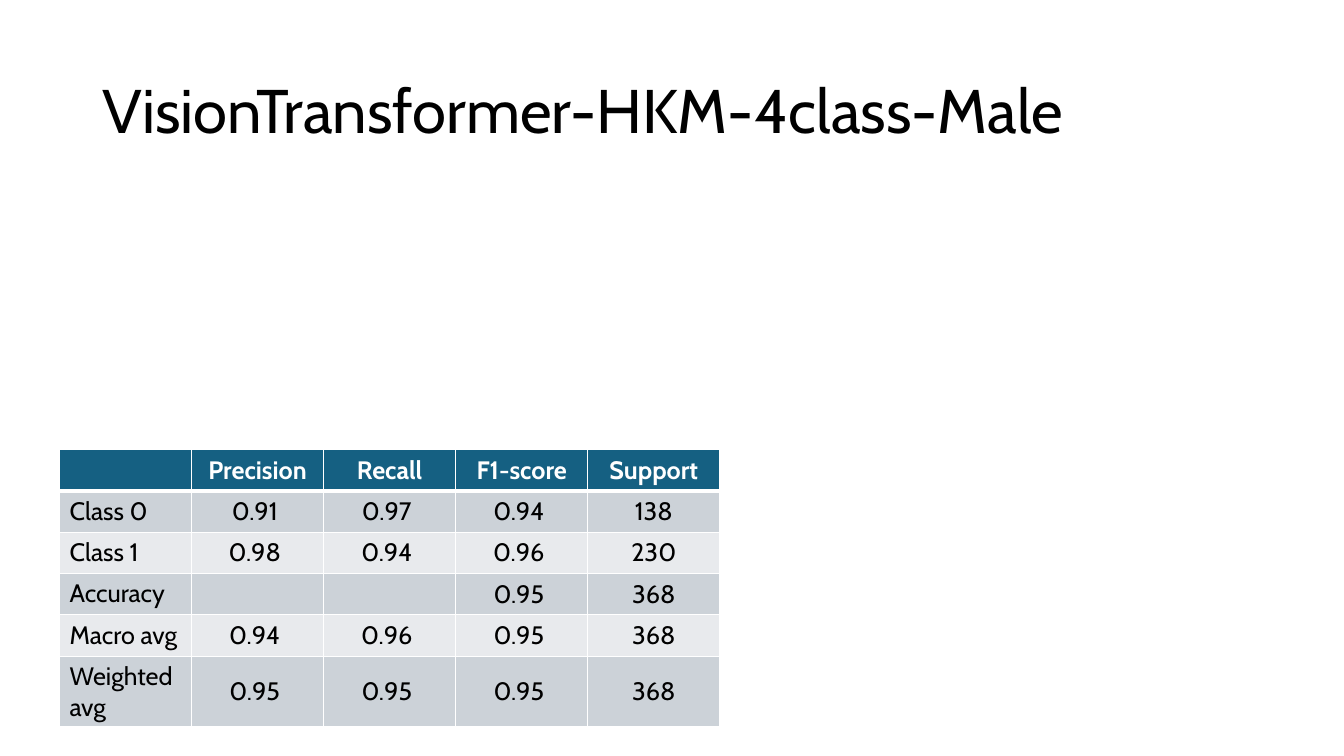
from lxml.etree import SubElement
from pptx import Presentation
from pptx.dml.color import RGBColor as Color
from pptx.enum.text import MSO_ANCHOR as Anchor, PP_ALIGN as Align
from pptx.oxml.ns import qn
from pptx.util import Inches, Pt

COLORS = {
    "text": "000000",
    "white": "FFFFFF",
    "header": "156082",
    "band_dark": "CCD2D8",
    "band_light": "E8EAED",
}

SCORES = [
    ["", "Precision", "Recall", "F1-score", "Support"],
    ["Class 0", "0.91 ", "0.97 ", "0.94 ", "138"],
    ["Class 1", "0.98 ", "0.94 ", "0.96 ", "230"],
    ["Accuracy", "", "", "0.95 ", "368"],
    ["Macro avg", "0.94 ", "0.96 ", "0.95 ", "368"],
    ["Weighted avg", "0.95 ", "0.95 ", "0.95 ", "368"],
]


class SlideBuilder:
    font_name = "Cabin"
    title_size = 44
    table_size = 18

    def __init__(self, presentation):
        self.slide = presentation.slides.add_slide(presentation.slide_layouts[6])

    def format_text(self, paragraph, size, color, bold=False):
        for run in paragraph.runs:
            run.font.name = self.font_name
            run.font.size = Pt(size)
            run.font.bold = bold
            run.font.color.rgb = Color.from_string(COLORS[color])

    def add_title(self, text, left, top, width, height):
        shape = self.slide.shapes.add_textbox(
            Inches(left), Inches(top), Inches(width), Inches(height)
        )
        text_frame = shape.text_frame
        text_frame.word_wrap = True
        text_frame.vertical_anchor = Anchor.MIDDLE
        text_frame.text = text
        paragraph = text_frame.paragraphs[0]
        paragraph.line_spacing = 0.9
        self.format_text(paragraph, self.title_size, "text")

    def add_borders(self, cell, top, bottom):
        properties = cell._tc.get_or_add_tcPr()
        widths = {"a:lnL": 1, "a:lnR": 1, "a:lnT": top, "a:lnB": bottom}
        for tag, width in widths.items():
            line = SubElement(properties, qn(tag), w=str(Pt(width)))
            fill = SubElement(line, qn("a:solidFill"))
            SubElement(fill, qn("a:srgbClr"), val=COLORS["white"])

    def format_cell(self, cell, text, row, column):
        is_header = row == 0
        fill = "header" if is_header else "band_dark" if row % 2 else "band_light"
        self.add_borders(cell, 3 if row == 1 else 1, 3 if is_header else 1)
        cell.fill.solid()
        cell.fill.fore_color.rgb = Color.from_string(COLORS[fill])
        cell.text_frame.text = text
        paragraph = cell.text_frame.paragraphs[0]
        if column > 0:
            cell.vertical_anchor = Anchor.MIDDLE
            paragraph.alignment = Align.CENTER
        text_color = "white" if is_header else "text"
        self.format_text(paragraph, self.table_size, text_color, is_header)

    def add_table(self, rows, left, top, column_width, row_height):
        column_count = len(rows[0])
        table = self.slide.shapes.add_table(
            len(rows), column_count, Inches(left), Inches(top),
            Inches(column_width * column_count), Inches(row_height * len(rows)),
        ).table
        for row, texts in enumerate(rows):
            for column, text in enumerate(texts):
                self.format_cell(table.cell(row, column), text, row, column)


def main():
    presentation = Presentation()
    presentation.slide_width = Inches(13.33)
    presentation.slide_height = Inches(7.5)
    builder = SlideBuilder(presentation)
    builder.add_title("VisionTransformer-HKM-4class-Male", 0.92, 0.4, 11.5, 1.45)
    builder.add_table(SCORES, 0.59, 4.46, 1.31, 0.41)
    presentation.save("out.pptx")


if __name__ == "__main__":
    main()
